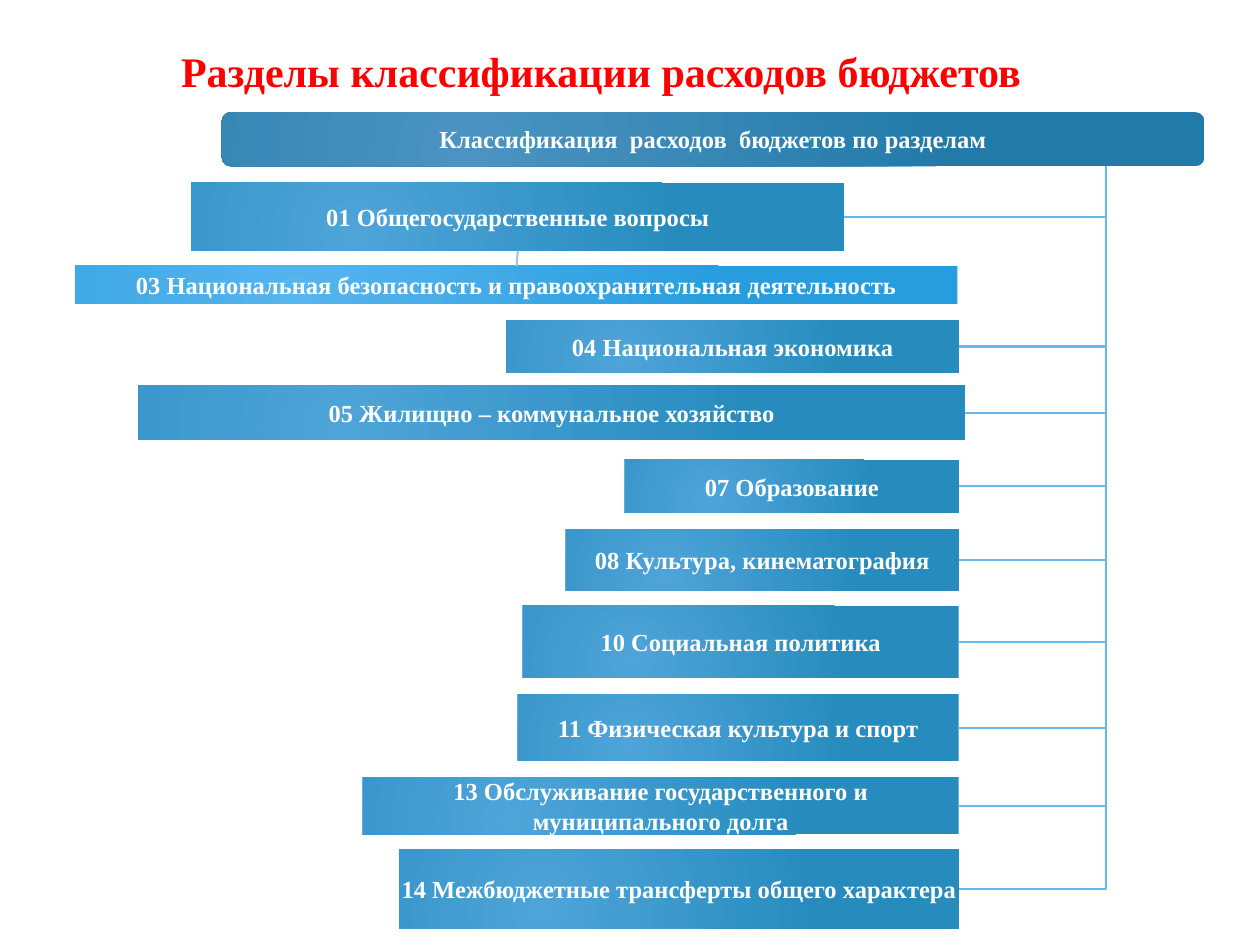
from lxml import etree
from pptx import Presentation
from pptx import util as u
from pptx.dml.color import RGBColor
from pptx.enum import shapes, text
from pptx.oxml import ns

RED = RGBColor(0xFF, 0x00, 0x00)
WHITE = RGBColor(0xFF, 0xFF, 0xFF)
BRANCH = RGBColor(0x65, 0xB7, 0xEE)
SUBBRANCH = RGBColor(0x9A, 0xCA, 0xF2)
HEADER_FILL = (RGBColor(0x4B, 0x93, 0xC2), RGBColor(0x22, 0x7A, 0xA8))
SECTION_FILL = (RGBColor(0x4E, 0xA4, 0xD9), RGBColor(0x27, 0x8B, 0xBE))
SUBSECTION_FILL = (RGBColor(0x56, 0xB4, 0xEE), RGBColor(0x27, 0x9D, 0xDD))

FONT = "Times New Roman"
RAIL_X = 8.78
RAIL_TOP = 1.32

HEADER = ("Классификация  расходов  бюджетов по разделам", 1.76, 0.89, 7.8, 0.43)
GENERAL = ("01 Общегосударственные вопросы", 1.52, 1.45, 5.18, 0.54)
SECURITY = ("03 Национальная безопасность и правоохранительная деятельность",
            0.6, 2.11, 7, 0.3)
SECTIONS = [
    ("04 Национальная экономика", 4.02, 2.54, 3.59, 0.42),
    ("05 Жилищно – коммунальное хозяйство", 1.1, 3.06, 6.56, 0.43),
    ("07 Образование", 4.96, 3.65, 2.65, 0.42),
    ("08 Культура, кинематография", 4.49, 4.2, 3.12, 0.49),
    ("10 Социальная политика", 4.15, 4.81, 3.46, 0.57),
    ("11 Физическая культура и спорт", 4.11, 5.51, 3.5, 0.53),
    ("13 Обслуживание государственного и муниципального долга",
     2.88, 6.17, 4.73, 0.45),
    ("14 Межбюджетные трансферты общего характера", 3.17, 6.74, 4.44, 0.63),
]


def write_text(shape, wording, size, color):
    frame = shape.text_frame
    frame.word_wrap = True
    frame.vertical_anchor = text.MSO_ANCHOR.MIDDLE
    frame.text = wording
    para = frame.paragraphs[0]
    para.alignment = text.PP_ALIGN.CENTER
    font = para.runs[0].font
    font.name = FONT
    font.size = u.Pt(size)
    font.bold = True
    font.color.rgb = color


def fill_radial(shape, colors):
    shape.fill.gradient()
    for stop, color in zip(shape.fill.gradient_stops, colors):
        stop.color.rgb = color
    gradient = shape._element.spPr.find(ns.qn("a:gradFill"))
    linear = gradient.find(ns.qn("a:lin"))
    radial = etree.Element(ns.qn("a:path"), {"path": "circle"})
    etree.SubElement(radial, ns.qn("a:fillToRect"),
                     {"l": "50000", "t": "100000", "r": "100000", "b": "50000"})
    gradient.replace(linear, radial)


def add_title(page, wording):
    box = page.shapes.add_textbox(
        u.Inches(0.51), u.Inches(0.3), u.Inches(8.52), u.Inches(0.53))
    write_text(box, wording, 24, RED)


def add_box(page, item, colors, preset=shapes.MSO_SHAPE.RECTANGLE):
    wording, *place = item
    box = page.shapes.add_shape(preset, *map(u.Inches, place))
    box.shadow.inherit = False
    box.line.fill.background()
    fill_radial(box, colors)
    write_text(box, wording, 14, WHITE)
    frame = box.text_frame
    frame.margin_left = frame.margin_right = u.Inches(0.01)
    frame.margin_top = frame.margin_bottom = u.Inches(0.01)
    return box


def add_branch(page, item):
    _, left, top, width, height = item
    middle = u.Inches(top + height / 2)
    builder = page.shapes.build_freeform(u.Inches(RAIL_X), u.Inches(RAIL_TOP))
    builder.add_line_segments(
        [(u.Inches(RAIL_X), middle), (u.Inches(left + width), middle)],
        close=False)
    branch = builder.convert_to_shape()
    branch.shadow.inherit = False
    branch.fill.background()
    branch.line.color.rgb = BRANCH
    branch.line.width = u.Pt(1.25)


def add_link(page, upper, lower):
    link = page.shapes.add_connector(shapes.MSO_CONNECTOR.STRAIGHT, 0, 0, 0, 0)
    link.begin_connect(upper, 2)
    link.end_connect(lower, 0)
    link.line.color.rgb = SUBBRANCH
    link.line.width = u.Pt(1.25)
    etree.SubElement(link._element.spPr, ns.qn("a:effectLst"))


def main():
    deck = Presentation()
    deck.slide_width = u.Inches(10)
    deck.slide_height = u.Inches(7.5)
    page = deck.slides.add_slide(deck.slide_layouts[6])

    add_title(page, "Разделы классификации расходов бюджетов")
    for item in reversed([GENERAL, *SECTIONS]):
        add_branch(page, item)
    add_box(page, HEADER, HEADER_FILL,
            shapes.MSO_SHAPE.FLOWCHART_ALTERNATE_PROCESS)
    general = add_box(page, GENERAL, SECTION_FILL)
    security = add_box(page, SECURITY, SUBSECTION_FILL)
    add_link(page, general, security)
    for item in SECTIONS:
        add_box(page, item, SECTION_FILL)

    deck.save("out.pptx")


if __name__ == "__main__":
    main()
